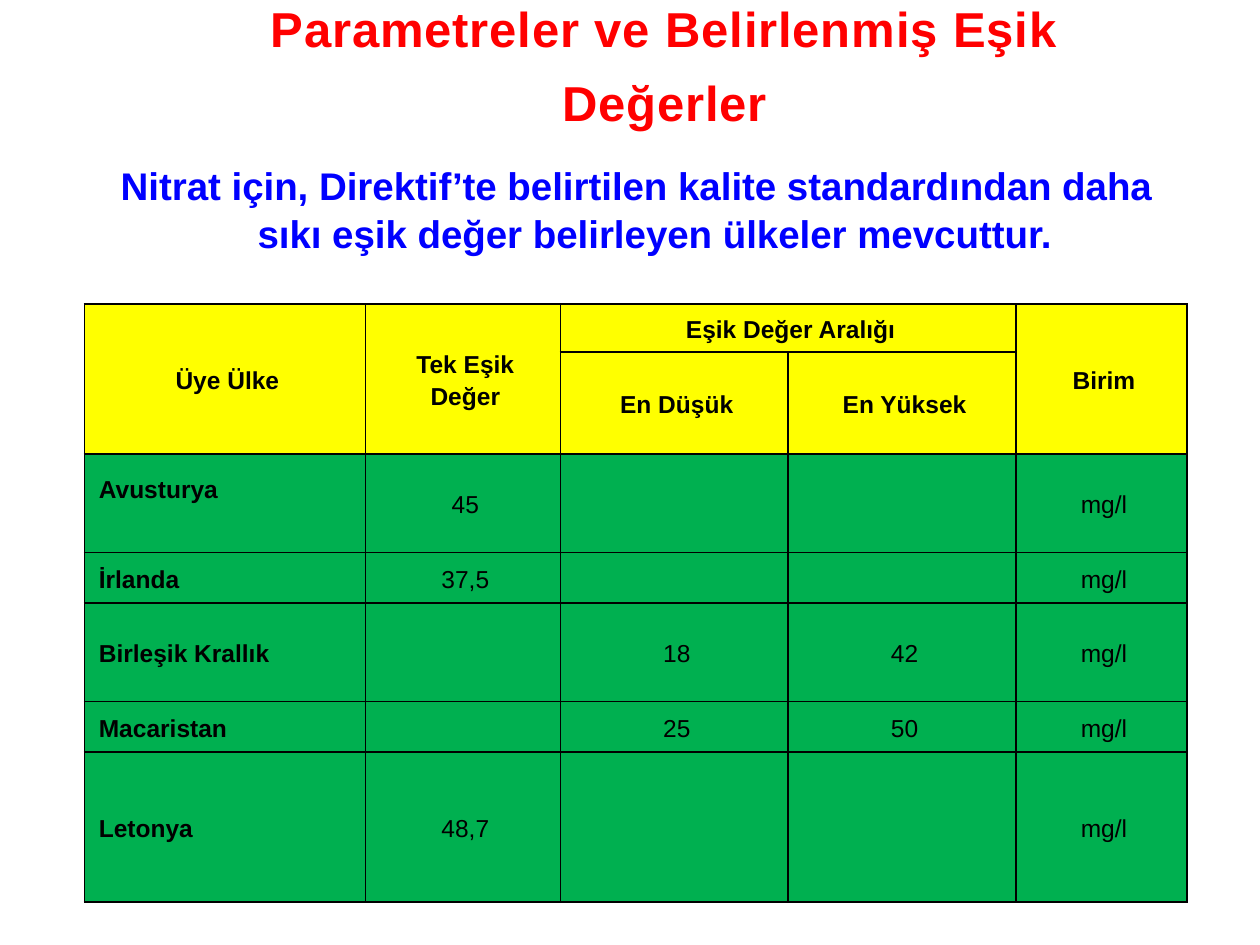
from lxml import etree
from pptx import Presentation
from pptx.dml.color import RGBColor
from pptx.enum.text import MSO_ANCHOR, PP_ALIGN
from pptx.oxml.ns import qn
from pptx.util import Pt

CENTER = PP_ALIGN.CENTER
LEFT = PP_ALIGN.LEFT
TOP = MSO_ANCHOR.TOP
MIDDLE = MSO_ANCHOR.MIDDLE

COLUMN_WIDTHS = [160.6, 111.4, 130.3, 130.1, 97.8]
ROW_HEIGHTS = [27.3, 58.4, 56.4, 28.8, 56.4, 28.8, 85.8]
MERGES = [(0, 0, 1, 0), (0, 1, 1, 1), (0, 2, 0, 3), (0, 4, 1, 4)]
HEADER_ROWS = 2
ROWS = [
    ["Üye Ülke", "Tek Eşik Değer", "Eşik Değer Aralığı", "", "Birim"],
    ["", "", "En Düşük", "En Yüksek", ""],
    ["Avusturya", "45", "", "", "mg/l"],
    ["İrlanda", "37,5", "", "", "mg/l"],
    ["Birleşik Krallık", "", "18", "42", "mg/l"],
    ["Macaristan", "", "25", "50", "mg/l"],
    ["Letonya", "48,7", "", "", "mg/l"],
]


def color(value):
    return RGBColor.from_string(value)


class SlideBuilder:
    font = "Arial"
    red = "FF0000"
    blue = "0000FF"
    black = "000000"
    yellow = "FFFF00"
    green = "00B050"

    def __init__(self, slide):
        self.slide = slide

    def style(self, font, size, value, bold, name=None):
        font.name = name or self.font
        font.size = Pt(size)
        font.bold = bold
        font.color.rgb = color(value)

    def indent(self, paragraph, left, first=0):
        properties = paragraph._p.get_or_add_pPr()
        properties.set("marL", str(Pt(left)))
        properties.set("indent", str(Pt(first)))

    def text_box(self, left, top, width, height, anchor):
        shape = self.slide.shapes.add_textbox(Pt(left), Pt(top), Pt(width), Pt(height))
        shape.text_frame.word_wrap = True
        shape.text_frame.vertical_anchor = anchor
        paragraph = shape.text_frame.paragraphs[0]
        paragraph.alignment = CENTER
        return paragraph

    def title(self, text):
        paragraph = self.text_box(93.6, 0, 572.4, 65.5, MIDDLE)
        paragraph.line_spacing = 1.26
        run = paragraph.add_run()
        run.text = text
        self.style(paragraph.font, 28, self.red, True)
        run._r.get_or_add_rPr().set("spc", "50")

    def statement(self, text):
        paragraph = self.text_box(36.7, 82.8, 648, 85, TOP)
        self.indent(paragraph, 27, -27)
        for content, size, name in ((" ", 28, "Calibri"), (text, 22, self.font)):
            run = paragraph.add_run()
            run.text = content
            self.style(run.font, size, self.blue, True, name)

    def borders(self, cell):
        properties = cell._tc.get_or_add_tcPr()
        for side in ("lnL", "lnR", "lnT", "lnB"):
            line = etree.SubElement(properties, qn(f"a:{side}"), w=str(Pt(1)))
            fill = etree.SubElement(line, qn("a:solidFill"))
            etree.SubElement(fill, qn("a:srgbClr"), val=self.black)

    def cell(self, cell, text, fill, bold, alignment):
        self.borders(cell)
        cell.fill.solid()
        cell.fill.fore_color.rgb = color(fill)
        cell.vertical_anchor = MIDDLE
        cell.margin_left = cell.margin_right = Pt(5.4)
        cell.margin_top = cell.margin_bottom = Pt(0)
        cell.text = text
        paragraph = cell.text_frame.paragraphs[0]
        self.indent(paragraph, 2.9)
        paragraph.alignment = alignment
        paragraph.line_spacing = 1.15
        self.style(paragraph.font, 14, self.black, bold)

    def table(self, left, top):
        frame = self.slide.shapes.add_table(
            len(ROWS), len(COLUMN_WIDTHS), Pt(left), Pt(top),
            Pt(sum(COLUMN_WIDTHS)), Pt(sum(ROW_HEIGHTS)))
        table = frame.table
        for column, width in zip(table.columns, COLUMN_WIDTHS):
            column.width = Pt(width)
        for row, height in zip(table.rows, ROW_HEIGHTS):
            row.height = Pt(height)
        for row_index, row in enumerate(ROWS):
            header = row_index < HEADER_ROWS
            for column_index, text in enumerate(row):
                country = not header and column_index == 0
                self.cell(table.cell(row_index, column_index), text,
                          self.yellow if header else self.green,
                          header or country, LEFT if country else CENTER)
        for first_row, first_column, last_row, last_column in MERGES:
            table.cell(first_row, first_column).merge(table.cell(last_row, last_column))
        table.cell(HEADER_ROWS, 0).margin_bottom = Pt(17)


def main():
    presentation = Presentation()
    presentation.slide_width = Pt(720)
    presentation.slide_height = Pt(540)
    builder = SlideBuilder(presentation.slides.add_slide(presentation.slide_layouts[6]))
    builder.title("Parametreler ve Belirlenmiş Eşik Değerler")
    builder.statement("Nitrat için, Direktif’te belirtilen kalite standardından daha "
                      "sıkı eşik değer belirleyen ülkeler mevcuttur.")
    builder.table(48.2, 173.7)
    presentation.save("out.pptx")


if __name__ == "__main__":
    main()
